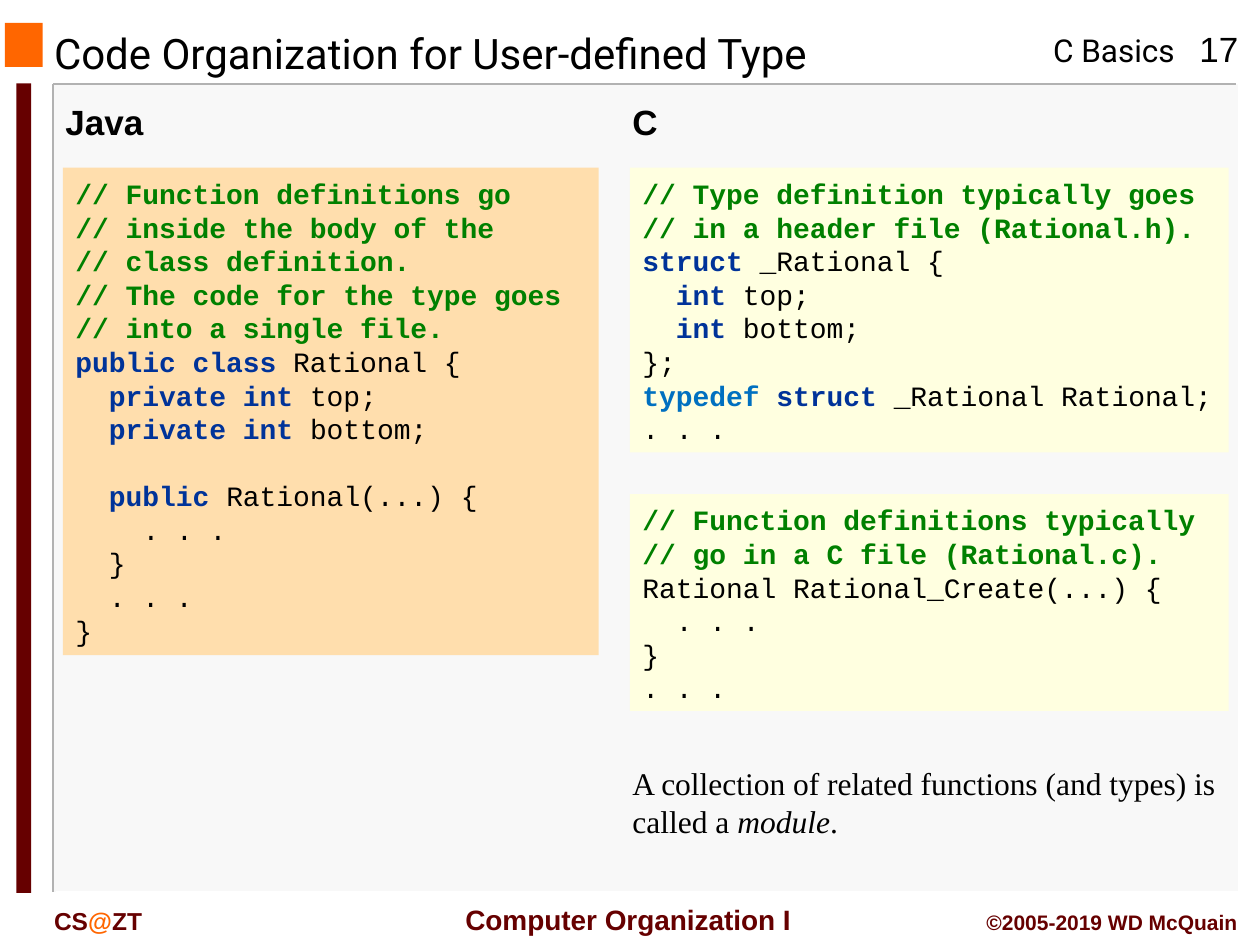
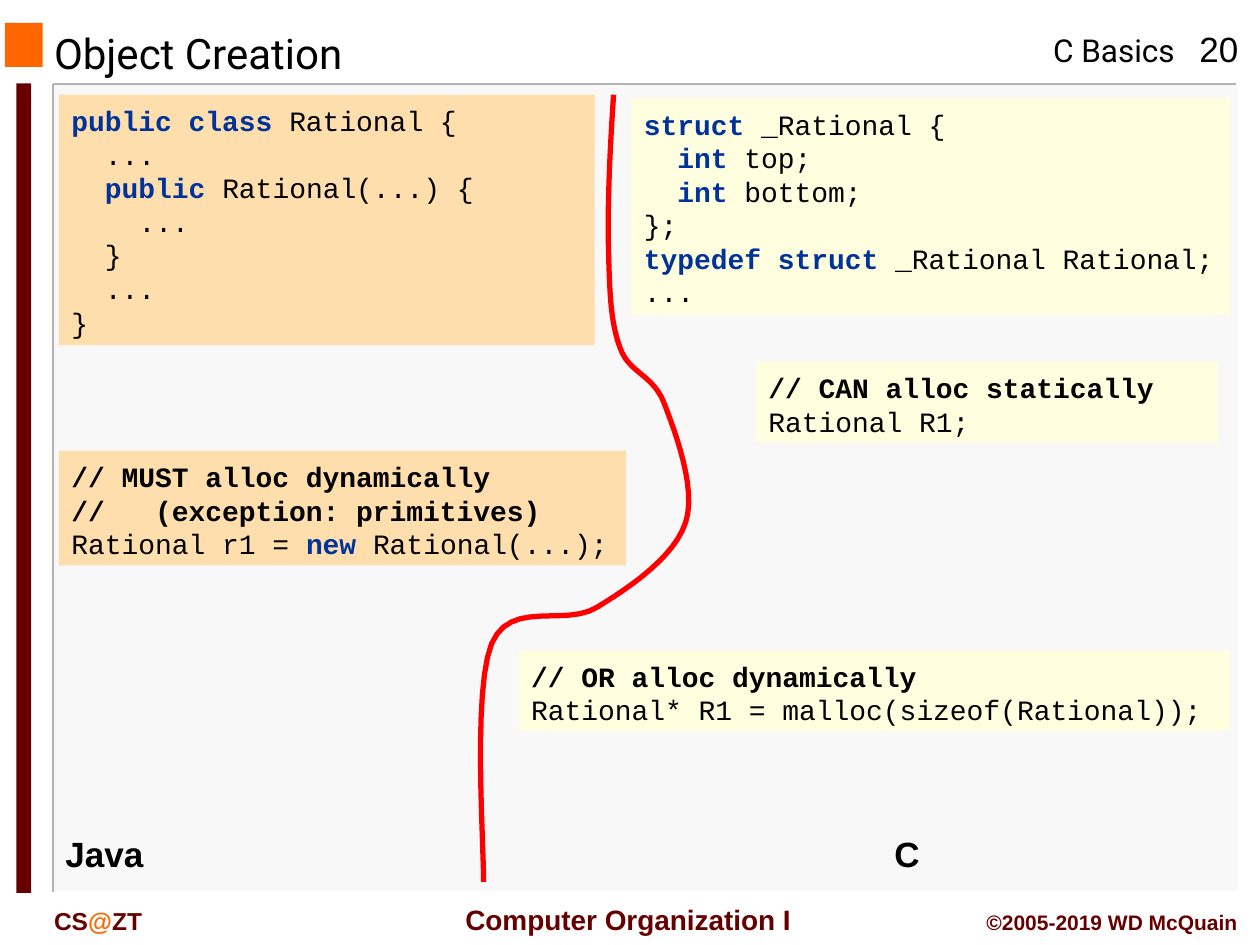
from itertools import groupby

from lxml.etree import SubElement
from pptx import Presentation
from pptx.dml.color import RGBColor
from pptx.enum.shapes import MSO_CONNECTOR, MSO_SHAPE
from pptx.enum.text import MSO_ANCHOR, PP_ALIGN
from pptx.oxml.ns import qn
from pptx.util import Cm, Pt

COLORS = {
    "black": "000000", "panel": "F8F8F8", "edge": "B2B2B2", "white": "FFFFFF",
    "orange": "FF6600", "maroon": "660000", "java": "FFDEAD", "c": "FFFFE0",
    "comment": "008000", "keyword": "003399", "typedef": "0070C0", "divider": "FF0000",
}
KEYWORDS = {"public", "private", "class", "int", "struct", "typedef", "new"}
CODE_LINE = 19.2
CODE_CHAR = 9.6

DIVIDER_START = (12.37, 1.91)
DIVIDER_CURVES = [
    ((12.29, 3.07), (12.24, 4.27), (12.27, 5.11)),
    ((12.29, 5.97), (12.32, 6.53), (12.5, 7.01)),
    ((12.67, 7.52), (13.16, 7.54), (13.39, 8.13)),
    ((13.61, 8.71), (14.05, 9.86), (13.82, 10.54)),
    ((13.59, 11.23), (12.7, 11.84), (12.04, 12.24)),
    ((11.4, 12.65), (10.29, 12.07), (9.91, 12.98)),
    ((9.53, 13.92), (9.75, 16.94), (9.75, 17.78)),
]


def rgb(name):
    return RGBColor.from_string(COLORS[name])


def add_run(p, text, font="Arial", size=16, color="black", bold=False, italic=False):
    r = p.add_run()
    r.text = text
    r.font.name = font
    r.font.size = Pt(size)
    r.font.color.rgb = rgb(color)
    r.font.bold = bold
    r.font.italic = italic


def add_text(s, box, *runs, align=PP_ALIGN.LEFT, anchor=MSO_ANCHOR.TOP, spacing=None, **fmt):
    tf = s.shapes.add_textbox(*map(Cm, box)).text_frame
    tf.word_wrap = True
    tf.vertical_anchor = anchor
    p = tf.paragraphs[0]
    p.alignment = align
    if spacing:
        p.line_spacing = Pt(spacing)
    for run in runs:
        text, extra = run if isinstance(run, tuple) else (run, {})
        add_run(p, text, **{**fmt, **extra})


def add_rect(s, box, color):
    sp = s.shapes.add_shape(MSO_SHAPE.RECTANGLE, *map(Cm, box))
    sp.shadow.inherit = False
    sp.fill.solid()
    sp.fill.fore_color.rgb = rgb(color)
    sp.line.fill.background()
    return sp


def add_line(s, ends, color):
    line = s.shapes.add_connector(MSO_CONNECTOR.STRAIGHT, *map(Cm, ends))
    line.line.color.rgb = rgb(color)
    line.line.width = Pt(1)
    SubElement(line._element.spPr, qn("a:effectLst"))


def add_code_line(p, line, comment, typedef):
    if line.startswith("//"):
        add_run(p, line, font="Courier New", color=comment, bold=True)
        return
    colors = {word: "keyword" for word in KEYWORDS}
    colors["typedef"] = typedef
    words = line.split(" ")
    spaced = [word + " " for word in words[:-1]] + words[-1:]
    for color, group in groupby(spaced, lambda word: colors.get(word.strip(), "black")):
        add_run(p, "".join(group), font="Courier New", color=color, bold=color != "black")


def add_code(s, box, language, code, comment="black", typedef="keyword"):
    tf = add_rect(s, box, language).text_frame
    tf.word_wrap = True
    tf.vertical_anchor = MSO_ANCHOR.TOP
    tf.margin_top = Cm(0.18)
    p, gap = None, 0
    for line in code.strip().split("\n"):
        if not line:
            gap += CODE_LINE
            continue
        p = tf.add_paragraph() if p else tf.paragraphs[0]
        p.alignment = PP_ALIGN.LEFT
        p.line_spacing = Pt(CODE_LINE)
        p.space_before = Pt(gap)
        gap = 0
        text = line.lstrip()
        indent = Pt((len(line) - len(text)) * CODE_CHAR)
        p._p.get_or_add_pPr().set("marL", str(indent))
        add_code_line(p, text, comment, typedef)


def add_label(s, left, top, text):
    add_text(s, (left, top, 3.81, 1.12), text, size=20, bold=True)


def add_divider(s):
    points = []
    start = DIVIDER_START
    for a, b, end in DIVIDER_CURVES:
        for step in range(1, 13):
            t = step / 12
            u = 1 - t
            points.append(tuple(
                Cm(u**3 * p0 + 3 * u * u * t * p1 + 3 * u * t * t * p2 + t**3 * p3)
                for p0, p1, p2, p3 in zip(start, a, b, end)))
        start = end
    builder = s.shapes.build_freeform(*map(Cm, DIVIDER_START))
    builder.add_line_segments(points, close=False)
    sp = builder.convert_to_shape()
    sp.shadow.inherit = False
    sp.fill.background()
    sp.line.color.rgb = rgb("divider")
    sp.line.width = Pt(3)


def add_slide(prs, title, number):
    s = prs.slides.add_slide(prs.slide_layouts[6])
    add_rect(s, (1.09, 1.7, 23.88, 16.28), "panel")
    for ends, color in [
        ((1.07, 1.7, 24.92, 1.7), "edge"),
        ((1.07, 1.7, 1.07, 17.98), "edge"),
        ((24.97, 1.7, 24.97, 17.98), "white"),
        ((1.12, 17.98, 24.97, 17.98), "white"),
    ]:
        add_line(s, ends, color)
    add_rect(s, (0.1, 0.46, 0.76, 0.89), "orange")
    add_rect(s, (0.33, 1.68, 0.3, 16.32), "maroon")
    add_text(s, (20.98, 0.51, 3.2, 1.02), "C Basics", font="Roboto", size=18)
    add_text(s, (23.72, 0.43, 1.7, 1.09), str(number), size=20, align=PP_ALIGN.CENTER)
    footer = {"color": "maroon", "bold": True}
    add_text(s, (8.97, 18.06, 7.39, 0.94), "Computer Organization I",
             align=PP_ALIGN.CENTER, anchor=MSO_ANCHOR.MIDDLE, **footer)
    add_text(s, (0.84, 18.14, 3.81, 0.84), "CS", ("@", {"color": "orange"}), "ZT",
             size=14, **footer)
    add_text(s, (18.85, 18.21, 6.35, 0.76), "©2005-2019 WD McQuain",
             size=12, align=PP_ALIGN.RIGHT, **footer)
    add_text(s, (0.84, 0.58, 16.08, 0.97), title, font="Roboto", size=24,
             anchor=MSO_ANCHOR.MIDDLE)
    return s


def add_code_organization(prs):
    s = add_slide(prs, "Code Organization for User-defined Type", 17)
    add_label(s, 1.07, 1.91, "Java")
    add_label(s, 12.5, 1.91, "C")
    add_code(s, (1.27, 3.38, 10.8, 9.83), "java", """
// Function definitions go
// inside the body of the
// class definition.
// The code for the type goes
// into a single file.
public class Rational {
  private int top;
  private int bottom;

  public Rational(...) {
    . . .
  }
  . . .
}
""", comment="comment")
    add_code(s, (12.7, 3.38, 12.07, 5.74), "c", """
// Type definition typically goes
// in a header file (Rational.h).
struct _Rational {
  int top;
  int bottom;
};
typedef struct _Rational Rational;
. . .
""", comment="comment", typedef="typedef")
    add_code(s, (12.7, 9.96, 12.07, 4.37), "c", """
// Function definitions typically
// go in a C file (Rational.c).
Rational Rational_Create(...) {
  . . .
}
. . .
""", comment="comment")
    add_text(s, (12.5, 15.27, 12.27, 1.8),
             "A collection of related functions (and types) is called a ",
             ("module", {"italic": True}), ".",
             font="Times New Roman", size=18, spacing=21.7)


def add_object_creation(prs):
    s = add_slide(prs, "Object Creation", 20)
    add_code(s, (1.19, 1.91, 10.8, 5.05), "java", """
public class Rational {
  ...
  public Rational(...) {
    ...
  }
  ...
}
""")
    add_code(s, (1.19, 9.09, 11.43, 2.31), "java", """
// MUST alloc dynamically
//   (exception: primitives)
Rational r1 = new Rational(...);
""")
    add_code(s, (12.73, 1.98, 12.07, 4.37), "c", """
struct _Rational {
  int top;
  int bottom;
};
typedef struct _Rational Rational;
...
""")
    add_code(s, (15.24, 7.29, 9.32, 1.63), "c", """
// CAN alloc statically
Rational R1;
""")
    add_code(s, (10.46, 13.11, 14.33, 1.63), "c", """
// OR alloc dynamically
Rational* R1 = malloc(sizeof(Rational));
""")
    add_divider(s)
    add_label(s, 1.07, 16.66, "Java")
    add_label(s, 17.78, 16.66, "C")


def main():
    prs = Presentation()
    prs.slide_width = Cm(25.4)
    prs.slide_height = Cm(19.05)
    add_code_organization(prs)
    add_object_creation(prs)
    prs.save("out.pptx")


if __name__ == "__main__":
    main()
